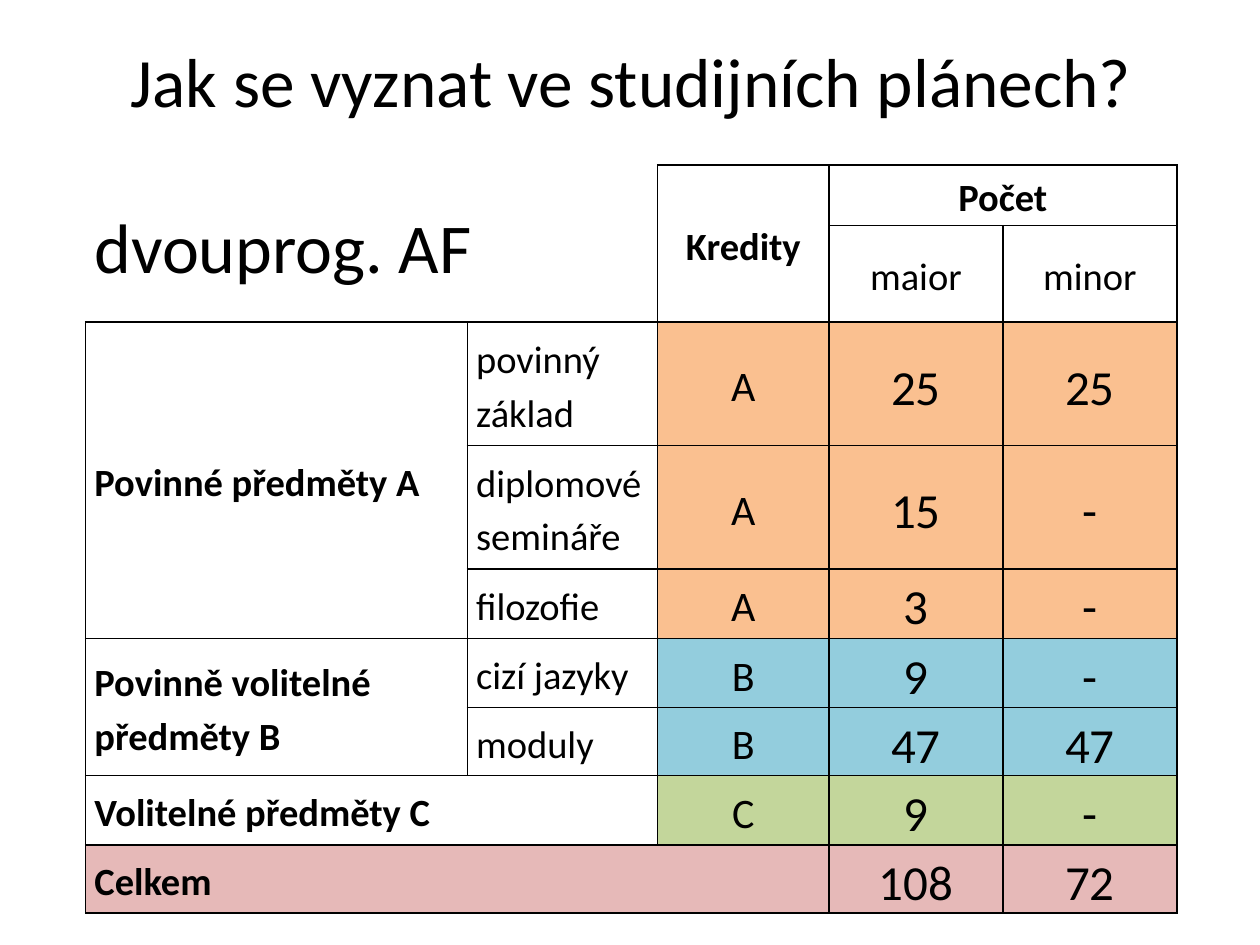
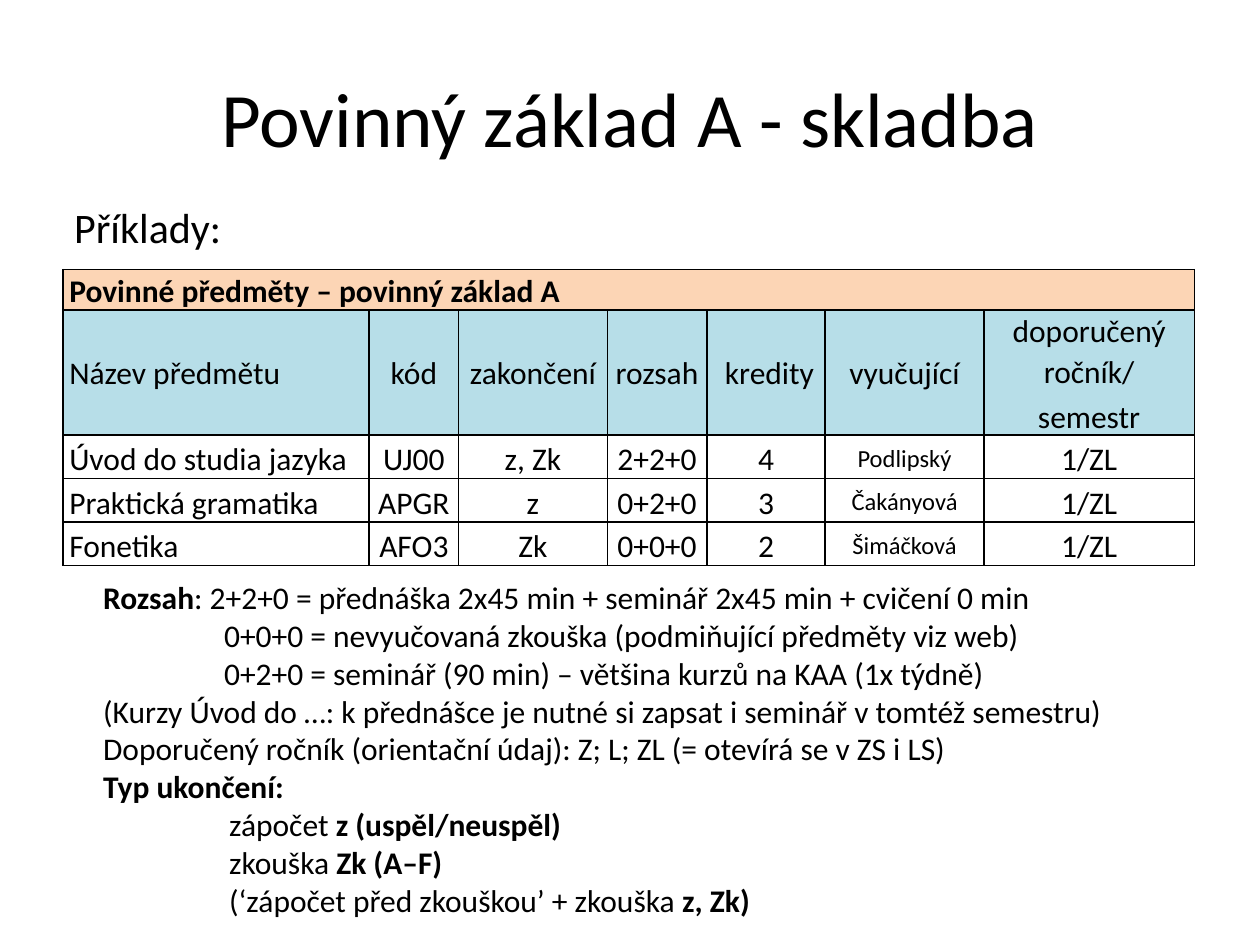
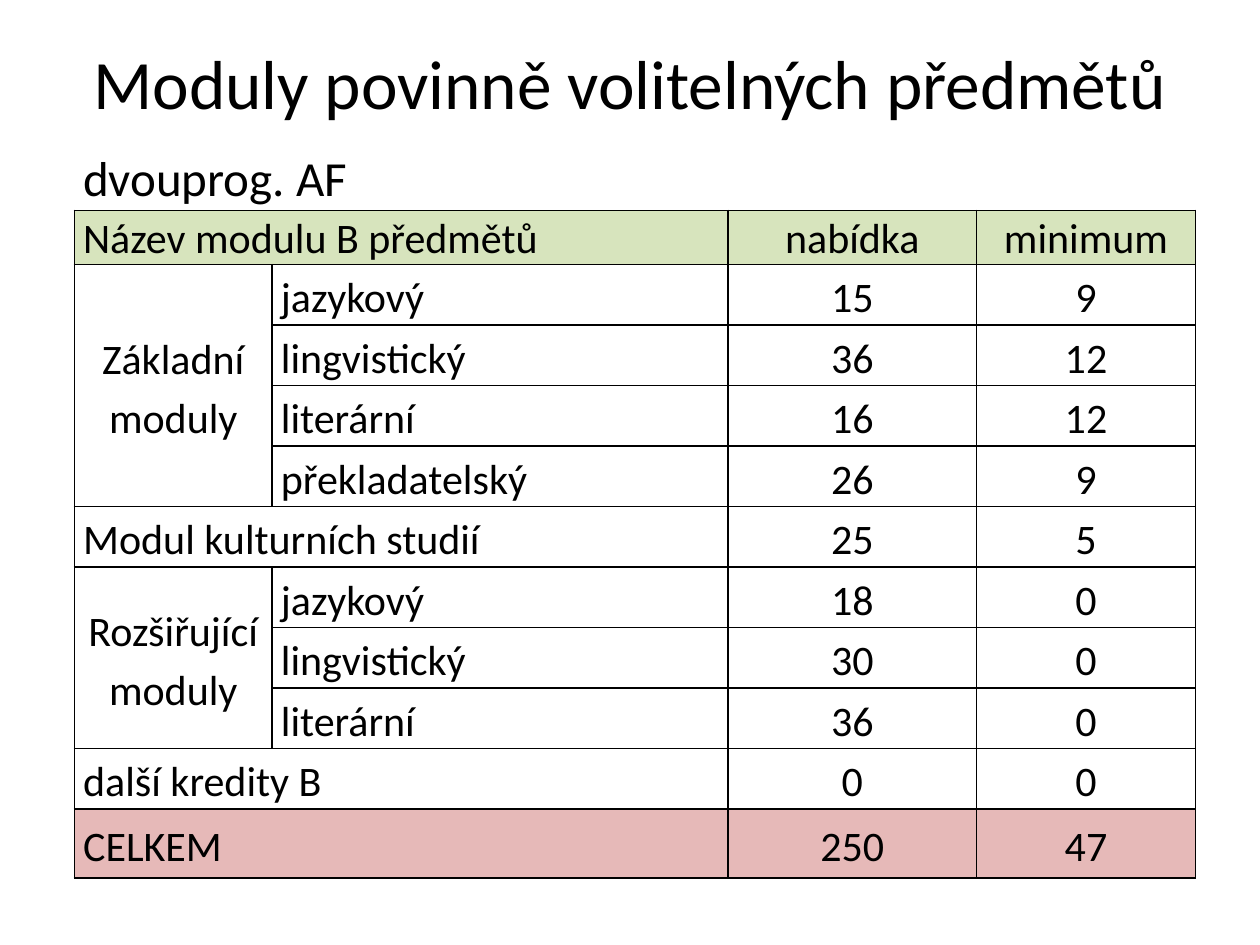
from pptx import Presentation
from pptx.dml.color import RGBColor
from pptx.enum.text import MSO_ANCHOR, PP_ALIGN
from pptx.oxml import parse_xml
from pptx.oxml.ns import nsdecls
from pptx.util import Inches, Pt

LEFT, CENTER = PP_ALIGN.LEFT, PP_ALIGN.CENTER
TOP, MIDDLE = MSO_ANCHOR.TOP, MSO_ANCHOR.MIDDLE

COLORS = {
    "text": "000000",
    "orange": "FAC090",
    "pale orange": "FCD5B5",
    "blue": "93CDDD",
    "pale blue": "B7DEE8",
    "green": "C3D69B",
    "pale green": "D7E4BD",
    "pink": "E6B9B8",
}
FONT = "Calibri"
SIDES = "LRTB"  # the order that the cell properties require


def style(size, bold=False, align=LEFT, spacing=1.15, before=0, after=0):
    """Format values of a run and of its paragraph."""
    return {
        "font": {"name": FONT, "size": Pt(size), "bold": bold},
        "paragraph": {"alignment": align, "line_spacing": spacing,
                      "space_before": Pt(before), "space_after": Pt(after)},
    }


def apply(target, values):
    for name, value in values.items():
        setattr(target, name, value)


class Deck:
    def __init__(self):
        self.presentation = Presentation()
        self.presentation.slide_width = Inches(10)
        self.presentation.slide_height = Inches(7.5)
        self.slide = None

    def new_slide(self):
        blank = self.presentation.slide_layouts[6]
        self.slide = self.presentation.slides.add_slide(blank)

    def paragraph(self, paragraph, runs, look, indent=0):
        """Fill a paragraph with (text, bold) runs."""
        apply(paragraph, look["paragraph"])
        if indent:
            paragraph._p.get_or_add_pPr().set("marL", str(Inches(indent)))
        for text, bold in runs:
            run = paragraph.add_run()
            run.text = text
            apply(run.font, {**look["font"], "bold": bold})
            run.font.color.rgb = RGBColor.from_string(COLORS["text"])

    def text(self, at, paragraphs, look, anchor=TOP, wrap=True):
        """Add a text box; each paragraph is (runs, indent)."""
        frame = self.slide.shapes.add_textbox(*map(Inches, at)).text_frame
        apply(frame, {"word_wrap": wrap, "vertical_anchor": anchor})
        for number, (runs, indent) in enumerate(paragraphs):
            target = frame.add_paragraph() if number else frame.paragraphs[0]
            self.paragraph(target, runs, look, indent)

    def title(self, at, text, size):
        look = style(size, align=CENTER, spacing=1.0)
        self.text(at, [([(text, False)], 0)], look, MIDDLE)

    def borders(self, cell, shown):
        properties = cell._tc.get_or_add_tcPr()
        for position, side in enumerate(SIDES):
            paint = (f'<a:solidFill><a:srgbClr val="{COLORS["text"]}"/></a:solidFill>'
                     if side in shown else "<a:noFill/>")
            line = f'<a:ln{side} {nsdecls("a")} w="{Pt(1)}">{paint}</a:ln{side}>'
            properties.insert(position, parse_xml(line))

    def cell(self, cell, text, look, fill, margin, shown):
        apply(cell, {"vertical_anchor": MIDDLE,
                     "margin_left": Inches(margin), "margin_right": Inches(margin),
                     "margin_top": 0, "margin_bottom": 0})
        if fill:
            cell.fill.solid()
            cell.fill.fore_color.rgb = RGBColor.from_string(COLORS[fill])
        else:
            cell.fill.background()
        self.borders(cell, shown)
        if text:
            frame = cell.text_frame
            for number, line in enumerate(text.split("\n")):
                target = frame.add_paragraph() if number else frame.paragraphs[0]
                self.paragraph(target, [(line, look["font"]["bold"])], look)

    def table(self, left, top, widths, heights, rows, spans=(), margin=0.07, open_cells=None):
        """Add a table; each row is (texts, looks, fill, first filled column).

        A span is (first row, first column, last row, last column), and
        open_cells maps cells with fewer borders to the sides they show.
        """
        size = (left, top, sum(widths), sum(heights))
        table = self.slide.shapes.add_table(len(heights), len(widths), *map(Inches, size)).table
        apply(table, {"first_row": False, "horz_banding": False})
        for column, width in zip(table.columns, widths):
            column.width = Inches(width)
        for row, height in zip(table.rows, heights):
            row.height = Inches(height)
        for row, column, last_row, last_column in spans:
            table.cell(row, column).merge(table.cell(last_row, last_column))
        for r, (texts, looks, fill, first_filled) in enumerate(rows):
            for c, (text, look) in enumerate(zip(texts, looks)):
                shown = (open_cells or {}).get((r, c), SIDES)
                self.cell(table.cell(r, c), text, look,
                          fill if c >= first_filled else None, margin, shown)


def study_plan(deck):
    deck.new_slide()
    deck.title((0.51, 0.19, 9, 0.88), "Jak se vyznat ve studijních plánech?", 39.6)

    program = style(40)
    group, part = style(22, bold=True), style(22)
    heading, subheading = style(22, bold=True, align=CENTER), style(22, align=CENTER)
    credit, count = style(24, align=CENTER), style(28, align=CENTER)
    body = [group, part, credit, count, count]

    rows = [
        (["dvouprog. AF", None, "Kredity", "Počet", None],
         [program, program, heading, heading, heading], None, 0),
        ([None, None, None, "maior", "minor"], [subheading] * 5, None, 0),
        (["Povinné předměty A", "povinný základ", "A", "25", "25"], body, "orange", 2),
        ([None, "diplomové semináře", "A", "15", "-"], body, "orange", 2),
        ([None, "filozofie", "A", "3", "-"], body, "orange", 2),
        (["Povinně volitelné předměty B", "cizí jazyky", "B", "9", "-"], body, "blue", 2),
        ([None, "moduly", "B", "47", "47"], body, "blue", 2),
        (["Volitelné předměty C", None, "C", "9", "-"], body, "green", 2),
        (["Celkem", None, None, "108", "72"], body, "pink", 0),
    ]
    spans = [(0, 0, 1, 1), (0, 2, 1, 2), (0, 3, 0, 4), (2, 0, 4, 0),
             (5, 0, 6, 0), (7, 0, 7, 1), (8, 0, 8, 2)]
    corner = {(r, c): "RB" for r in range(2) for c in range(2)}
    deck.table(0.68, 1.31, [3.03, 1.51, 1.36, 1.38, 1.38],
               [0.48, 0.48, 0.98, 0.98, 0.55, 0.55, 0.54, 0.55, 0.54],
               rows, spans, open_cells=corner)


def compulsory_base(deck):
    deck.new_slide()
    deck.title((0.5, 0.3, 9, 1.25), "Povinný základ A - skladba", 44)

    # Explanations below the table
    scope_indent, ending_indent = 0.96, 1
    explanations = [
        ([("Rozsah", True),
          (": 2+2+0 = přednáška 2x45 min + seminář 2x45 min + cvičení 0 min", False)], 0),
        ([("0+0+0 = nevyučovaná zkouška (podmiňující předměty viz web)", False)], scope_indent),
        ([("0+2+0 = seminář (90 min) – většina kurzů na KAA (1x týdně)", False)], scope_indent),
        ([("(Kurzy Úvod do …: k přednášce je nutné si zapsat i seminář v tomtéž semestru)",
           False)], 0),
        ([("Doporučený ročník (orientační údaj): Z; L; ZL (= otevírá se v ZS i LS)", False)], 0),
        ([("Typ ukončení:", True)], 0),
        ([("zápočet ", False), ("z (uspěl/neuspěl)", True)], ending_indent),
        ([("zkouška ", False), ("Zk (A–F)", True)], ending_indent),
        ([("(‘zápočet před zkouškou’ + zkouška ", False), ("z, Zk)", True)], ending_indent),
    ]
    deck.text((0.72, 4.54, 8.98, 2.83), explanations, style(18, spacing=1.0))

    # Sample courses
    banner = style(18, bold=True, spacing=1.07, before=3, after=3)
    name_heading = style(18, spacing=1.07, before=2)
    heading = style(18, align=CENTER, spacing=1.07, before=2)
    name, value, teacher = style(18), style(18, align=CENTER), style(14, align=CENTER)
    course = [name] + [value] * 4 + [teacher, value]
    rows = [
        (["Povinné předměty – povinný základ A"] + [None] * 6, [banner] * 7, "pale orange", 0),
        (["Název předmětu", "kód", "zakončení", "rozsah", " kredity", "vyučující",
          "doporučený ročník/\nsemestr"], [name_heading] + [heading] * 6, "pale blue", 0),
        (["Úvod do studia jazyka", "UJ00", "z, Zk", "2+2+0", "4", "Podlipský", "1/ZL"],
         course, None, 0),
        (["Praktická gramatika", "APGR", "z", "0+2+0", "3", "Čakányová", "1/ZL"],
         course, None, 0),
        (["Fonetika", "AFO3", "Zk", "0+0+0", "2", "Šimáčková", "1/ZL"], course, None, 0),
    ]
    deck.table(0.5, 2.14, [2.43, 0.71, 1.18, 0.79, 0.94, 1.26, 1.67],
               [0.31, 0.99] + [0.34] * 3, rows, [(0, 0, 0, 6)], margin=0.05)

    deck.text((0.49, 1.55, 1.38, 0.5), [([("Příklady:", False)], 0)],
              style(24, spacing=1.0), wrap=False)


def elective_modules(deck):
    deck.new_slide()
    deck.title((0.5, 0.22, 9, 0.85), "Moduly povinně volitelných předmětů", 39.6)

    program = style(28, spacing=1.07, before=3, after=3)
    name_heading = style(24, spacing=1.07, before=3, after=3)
    heading = style(24, align=CENTER, spacing=1.07, before=3, after=3)
    name, value = style(24), style(24, align=CENTER)
    grouped = [value, name, name, value, value]
    single = [name, name, name, value, value]
    rows = [
        (["dvouprog. AF"] + [None] * 4, [program] * 5, None, 0),
        (["Název modulu B předmětů", None, None, "nabídka", "minimum"],
         [name_heading] * 3 + [heading] * 2, "pale green", 0),
        (["Základní moduly", "jazykový", None, "15", "9"], grouped, None, 0),
        ([None, "lingvistický", None, "36", "12"], grouped, None, 0),
        ([None, "literární", None, "16", "12"], grouped, None, 0),
        ([None, "překladatelský", None, "26", "9"], grouped, None, 0),
        (["Modul kulturních studií", None, None, "25", "5"], single, None, 0),
        (["Rozšiřující moduly", "jazykový", None, "18", "0"], grouped, None, 0),
        ([None, "lingvistický", None, "30", "0"], grouped, None, 0),
        ([None, "literární", None, "36", "0"], grouped, None, 0),
        (["další kredity B", None, None, "0", "0"], single, None, 0),
        (["CELKEM", None, None, "250", "47"], single, "pink", 0),
    ]
    full_names = [(r, 0, r, 2) for r in (1, 6, 10, 11)]
    module_names = [(r, 1, r, 2) for r in (2, 3, 4, 5, 7, 8, 9)]
    spans = [(0, 0, 0, 1), (2, 0, 5, 0), (7, 0, 9, 0)] + full_names + module_names
    deck.table(0.59, 1.15, [1.57, 1.89, 1.73, 1.97, 1.74],
               [0.52, 0.43] + [0.48] * 9 + [0.55], rows, spans,
               open_cells={(0, c): "B" for c in range(5)})


def main():
    deck = Deck()
    study_plan(deck)
    compulsory_base(deck)
    elective_modules(deck)
    deck.presentation.save("out.pptx")


if __name__ == "__main__":
    main()
